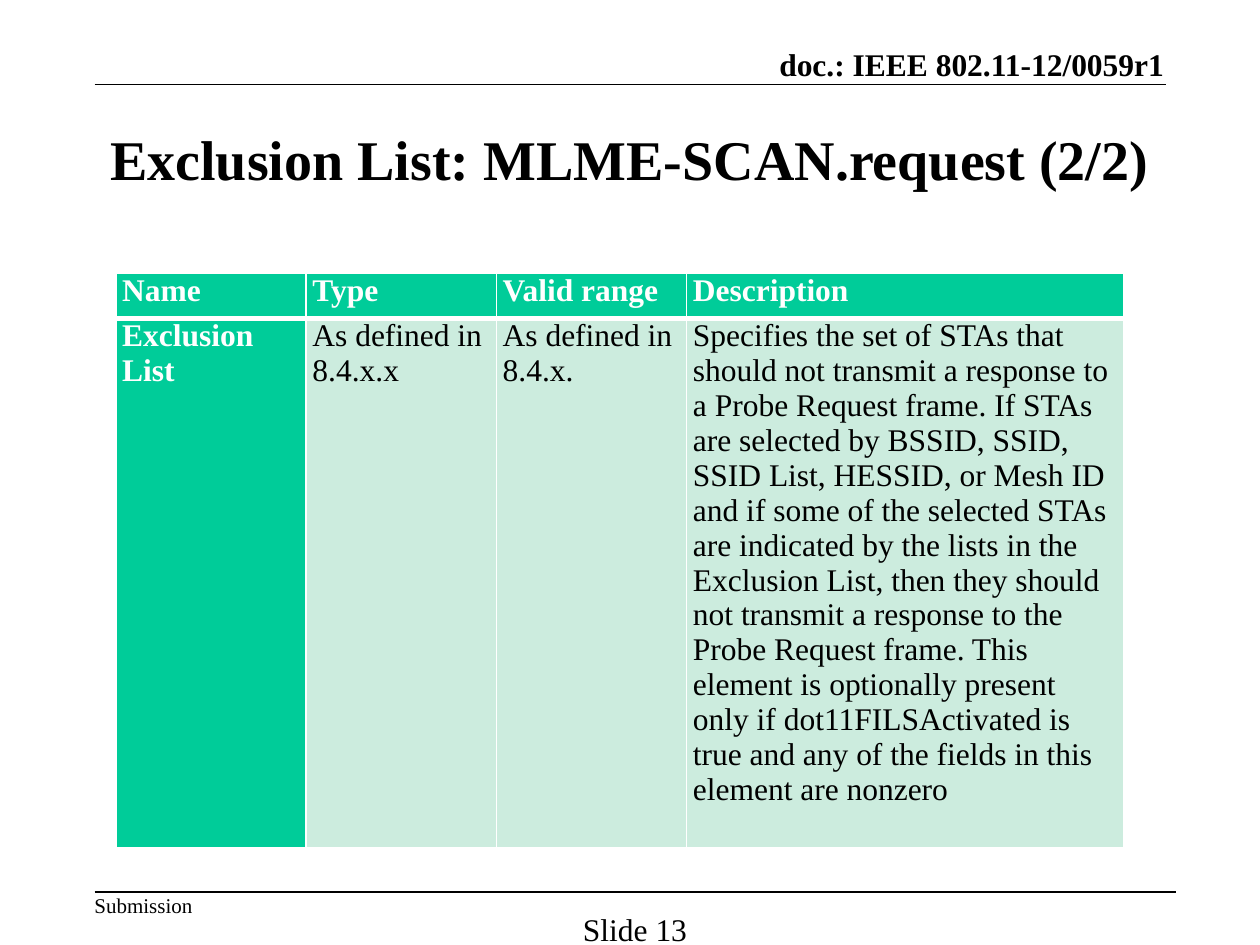
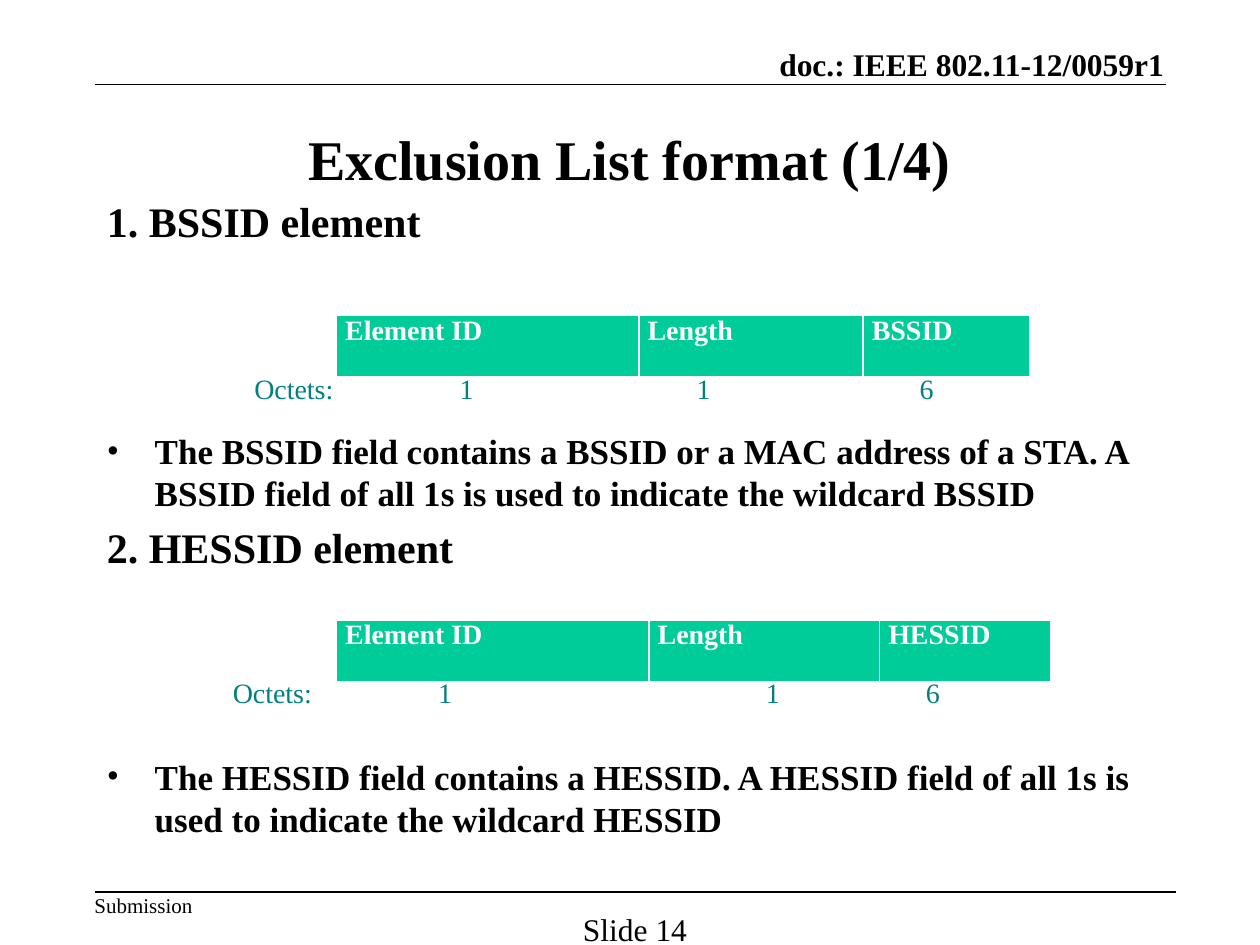
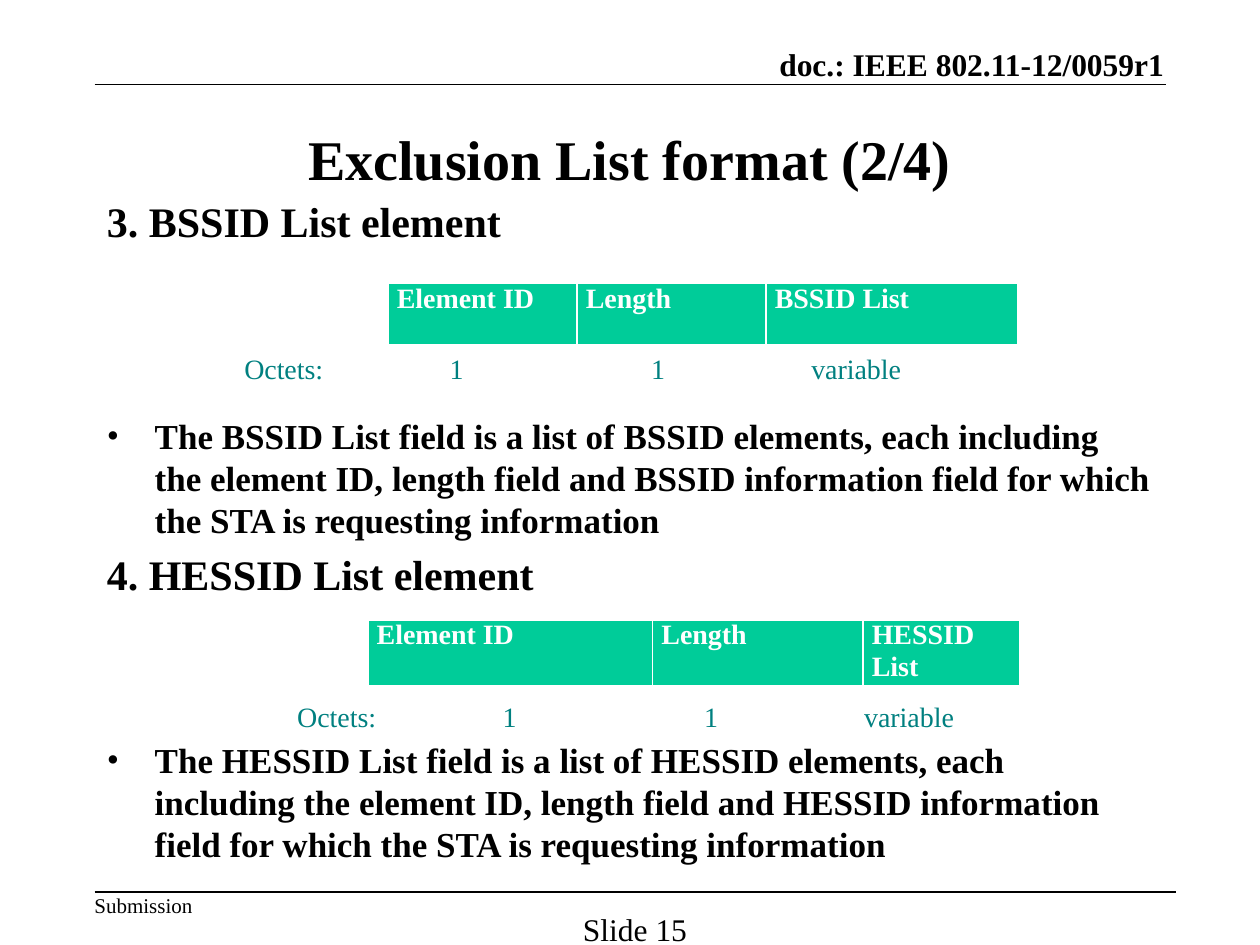
from pptx import Presentation
from pptx.dml.color import RGBColor
from pptx.enum.shapes import MSO_CONNECTOR
from pptx.enum.text import MSO_ANCHOR as Anchor, PP_ALIGN as Align
from pptx.oxml.ns import qn
from pptx.util import Inches, Pt
from lxml.etree import SubElement, Element

FONT = "Times New Roman"
BLACK, WHITE, GREEN, MINT, TEAL = "000000", "FFFFFF", "00CC99", "CCECDE", "008080"
BODY = (0.75, 1.5, 8.5, 5.58)
PAD = (0.1, 0.05)


def paint(color):
    return RGBColor.from_string(color)


def style(para, size, color=BLACK, bold=False):
    for run in para.runs:
        font = run.font
        font.name, font.size, font.bold = FONT, Pt(size), bold
        font.color.rgb = paint(color)


def inset(item, across, down):
    item.margin_left = item.margin_right = Inches(across)
    item.margin_top = item.margin_bottom = Inches(down)


def frame(slide, box, pad=(0, 0), anchor=Anchor.TOP):
    """Add an empty text box and return its text frame."""
    text = slide.shapes.add_textbox(*map(Inches, box)).text_frame
    text.word_wrap = True
    text.vertical_anchor = anchor
    inset(text, *pad)
    return text


def label(slide, box, words, size, color=BLACK, bold=False, align=Align.LEFT, **look):
    para = frame(slide, box, **look).paragraphs[0]
    para.text = words
    para.alignment = align
    style(para, size, color, bold)
    return para


def rule(slide, left, right, top):
    ends = map(Inches, (left, top, right, top))
    line = slide.shapes.add_connector(MSO_CONNECTOR.STRAIGHT, *ends)
    line.line.color.rgb = paint(BLACK)
    line.line.width = Pt(1)
    SubElement(line._element.spPr, qn("a:effectLst"))


def base(deck, number, title):
    """Add a slide with its header, footer, number and title."""
    slide = deck.slides.add_slide(deck.slide_layouts[6])
    label(slide, (5.66, 0.36, 3.58, 0.3), "doc.: IEEE 802.11-12/0059r1", 18,
          bold=True, align=Align.RIGHT, anchor=Anchor.BOTTOM)
    rule(slide, 0.75, 9.25, 0.67)
    label(slide, (0.75, 7.08, 1, 0.2), "Submission", 12)
    rule(slide, 0.75, 9.33, 7.08)
    label(slide, (4.54, 7.22, 1, 0.2), f"Slide {number}", 18, align=Align.CENTER)
    label(slide, (0.75, 0.67, 8.5, 1.17), title, 32, bold=True,
          align=Align.CENTER, pad=PAD, anchor=Anchor.MIDDLE)
    return slide


def edge(cell, top, bottom):
    """Draw white cell borders; top and bottom are widths in points."""
    props = cell._tc.get_or_add_tcPr()
    for spot, (side, width) in enumerate(zip("LRTB", (1, 1, top, bottom))):
        line = Element(qn(f"a:ln{side}"), w=str(Pt(width)))
        SubElement(SubElement(line, qn("a:solidFill")), qn("a:srgbClr"), val=WHITE)
        props.insert(spot, line)


def grid(slide, left, top, cols, heights, rows, size, pad):
    """Add a table with a green header row and a green first column."""
    box = map(Inches, (left, top, sum(cols), sum(heights)))
    table = slide.shapes.add_table(len(rows), len(cols), *box).table
    for col, width in zip(table.columns, cols):
        col.width = Inches(width)
    for r, (height, row) in enumerate(zip(heights, rows)):
        table.rows[r].height = Inches(height)
        for c, words in enumerate(row):
            cell = table.cell(r, c)
            head = r == 0 or c == 0
            cell.text = words
            inset(cell, pad, 0)
            cell.fill.solid()
            cell.fill.fore_color.rgb = paint(GREEN if head else MINT)
            edge(cell, *((1, 3) if r == 0 else (3, 1)))
            style(cell.text_frame.paragraphs[0], size, WHITE if head else BLACK, head)


def octets(slide, box, sizes, stops):
    """Add the line of field sizes, each at its tab stop."""
    para = label(slide, box, "", 16, pad=PAD, anchor=Anchor.MIDDLE)
    tabs = SubElement(para._p.get_or_add_pPr(), qn("a:tabLst"))
    for stop in stops:
        SubElement(tabs, qn("a:tab"), pos=str(Inches(stop)), algn="l")
    para.text = "\t".join(["Octets:", *sizes])
    style(para, 16, TEAL)


def bullet(para):
    props = para._p.get_or_add_pPr()
    props.set("marL", str(Inches(0.38)))
    props.set("indent", str(-Inches(0.38)))
    SubElement(props, qn("a:buFont"), typeface=FONT)
    SubElement(props, qn("a:buChar"), char="•")


def notes(slide, parts):
    """Fill the body with headings and bullets; each part has (heading, gap, bullet)."""
    text = frame(slide, BODY, PAD)
    for index, (head, gap, point) in enumerate(parts):
        para = text.add_paragraph() if index else text.paragraphs[0]
        para.text = head
        para.line_spacing = Pt(29)
        if index:
            para.space_before = Pt(4)
        style(para, 24, bold=True)
        para = text.add_paragraph()
        bullet(para)
        para.text = point
        para.line_spacing = Pt(24)
        para.space_before = Pt(gap)
        style(para, 20, bold=True)


def formats(deck, number, title, parts, fields):
    """Add a slide of element formats with their field tables."""
    slide = base(deck, number, title)
    notes(slide, parts)
    for left, top, cols, name, box, sizes, stops in fields:
        row = ["Element ID", "Length", name]
        grid(slide, left, top, cols, [0.5], [row], 16, 0.07)
        octets(slide, box, sizes, stops)


def request(deck):
    slide = base(deck, 13, "Exclusion List: MLME-SCAN.request (2/2)")
    rows = [
        ["Name", "Type", "Valid range", "Description"],
        ["Exclusion List", "As defined in 8.4.x.x", "As defined in 8.4.x.",
         "Specifies the set of STAs that should not transmit a response to a Probe "
         "Request frame. If STAs are selected by BSSID, SSID, SSID List, HESSID, or "
         "Mesh ID and if some of the selected STAs are indicated by the lists in the "
         "Exclusion List, then they should not transmit a response to the Probe "
         "Request frame. This element is optionally present only if "
         "dot11FILSActivated is true and any of the fields in this element are "
         "nonzero"],
    ]
    grid(slide, 0.92, 2.17, [1.51, 1.51, 1.51, 3.47], [0.36, 4.08], rows, 18, 0.05)


def main():
    deck = Presentation()
    deck.slide_width, deck.slide_height = Inches(10), Inches(7.5)
    request(deck)
    formats(deck, 14, "Exclusion List format (1/4)", [
        ("1. BSSID element", 105,
         "The BSSID field contains a BSSID or a MAC address of a STA. A BSSID field "
         "of all 1s is used to indicate the wildcard BSSID"),
        ("2. HESSID element", 105,
         "The HESSID field contains a HESSID. A HESSID field of all 1s is used to "
         "indicate the wildcard HESSID"),
    ], [
        (2.67, 2.5, [2.4, 1.78, 1.32], "BSSID",
         (1.92, 2.9, 6.67, 0.37), "116", (1.63, 3.51, 5.28)),
        (2.67, 4.92, [2.48, 1.83, 1.36], "HESSID",
         (1.75, 5.31, 7, 0.37), "116", (1.63, 4.23, 5.5)),
    ])
    sizes, stops = ("1", "1", "variable"), (1.63, 3.23, 4.5)
    formats(deck, 15, "Exclusion List format (2/4)", [
        ("3. BSSID List element", 96.5,
         "The BSSID List field is a list of BSSID elements, each including the "
         "element ID, length field and BSSID information field for which the STA is "
         "requesting information"),
        ("4. HESSID List element", 80,
         "The HESSID List field is a list of HESSID elements, each including the "
         "element ID, length field and HESSID information field for which the STA is "
         "requesting information"),
    ], [
        (3.08, 2.25, [1.5, 1.5, 2], "BSSID List",
         (1.84, 2.74, 5.49, 0.37), sizes, stops),
        (2.92, 4.92, [2.26, 1.67, 1.24], "HESSID List",
         (2.26, 5.5, 6.41, 0.37), sizes, stops),
    ])
    deck.save("out.pptx")


if __name__ == "__main__":
    main()
